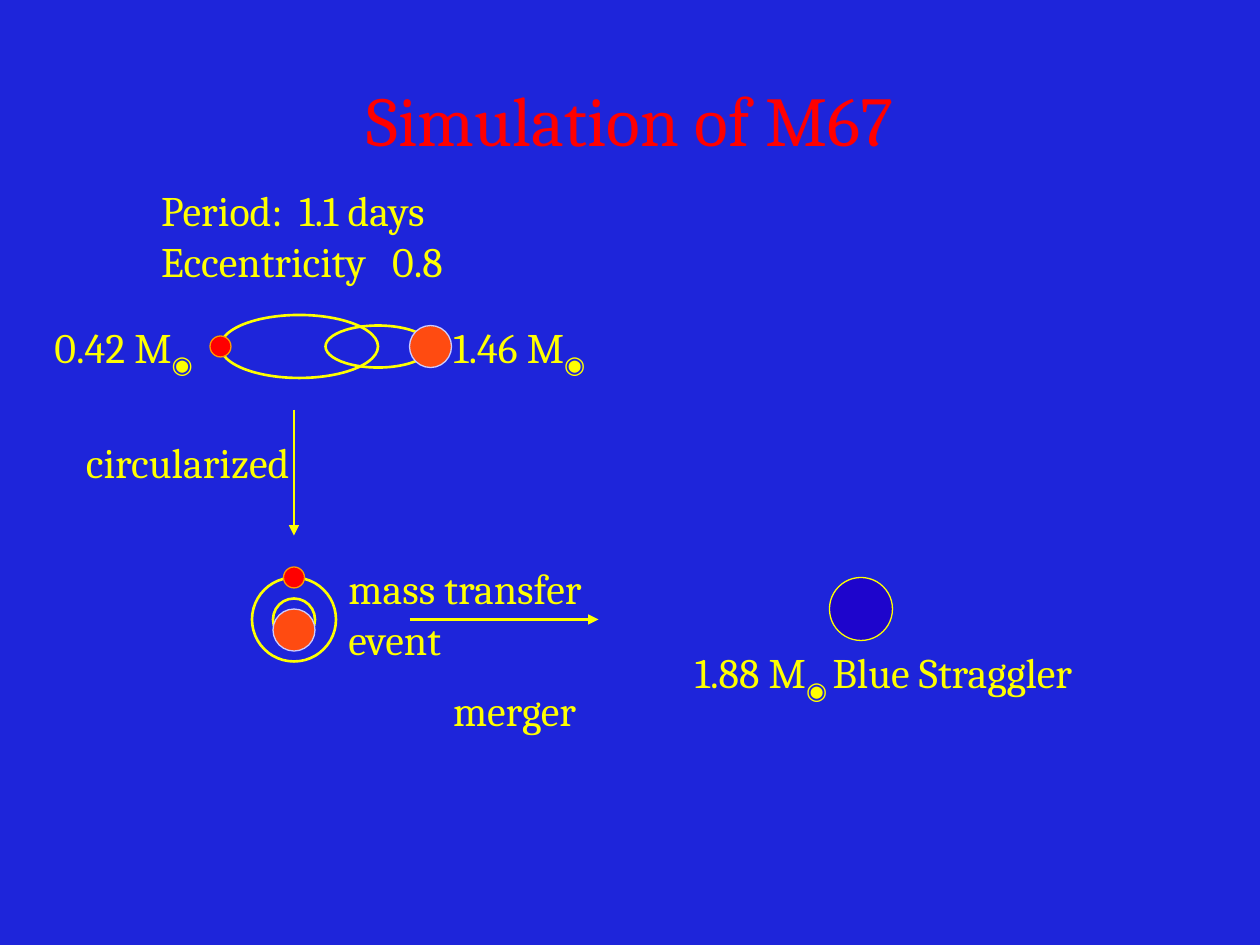
import pptx
import pptx.dml.color
import pptx.enum.shapes
import pptx.enum.text
import pptx.oxml
import pptx.oxml.ns
import pptx.util

Pt = pptx.util.Pt
RGBColor = pptx.dml.color.RGBColor
Align = pptx.enum.text.PP_ALIGN
Anchor = pptx.enum.text.MSO_ANCHOR

BACKGROUND = RGBColor(0x1E, 0x25, 0xDA)
YELLOW = RGBColor(0xFF, 0xFF, 0x00)
RED = RGBColor(0xFF, 0x00, 0x00)
ORANGE = RGBColor(0xFF, 0x4B, 0x11)
AMBER = RGBColor(0xFF, 0x99, 0x00)
LAVENDER = RGBColor(0xCC, 0xCC, 0xFF)
DEEP_BLUE = RGBColor(0x1E, 0x05, 0xCC)

FONT = "Cambria"
SUN = "◉"

# kind of body: fill, outline, outline width
STYLES = {
    "orbit": (None, YELLOW, 1.5),
    "primary": (ORANGE, LAVENDER, 0.75),
    "companion": (RED, AMBER, 0.75),
    "straggler": (DEEP_BLUE, YELLOW, 0.75),
}

# kind, centre x, centre y, width, height
BODIES = [
    ("orbit", 168, 354, 24, 24),
    ("orbit", 168, 354, 48, 48),
    ("primary", 168, 360, 24, 24),
    ("companion", 168, 330, 12, 12),
    ("straggler", 492, 348, 36, 36),
    ("orbit", 171, 198, 90, 36),
    ("orbit", 216, 198, 60, 24),
    ("primary", 246, 198, 24, 24),
    ("companion", 126, 198, 12, 12),
]

# start x, start y, end x, end y
ARROWS = [(168, 234, 168, 306), (234, 354, 342, 354)]

# box, then paragraphs as (alignment, runs)
LABELS = [
    ((42, 246, 144, 36), [(Align.LEFT, ["circularized"])]),
    ((192, 318, 204, 80), [(Align.LEFT, ["mass transfer event"]),
                           (Align.CENTER, ["merger"])]),
    ((390, 366, 264, 36), [(Align.LEFT, ["1.88 M", SUN + " ", "Blue Straggler"])]),
    ((252, 180, 144, 36), [(Align.LEFT, ["1.46 M", SUN])]),
    ((24, 180, 102, 36), [(Align.LEFT, ["0.42 M", SUN])]),
]

TITLE = "Simulation of M67"
TITLE_BOX = (54, 23, 612, 90)

# name, value, tab stop of the value
ORBIT_FACTS = [("Period:", "1.1 days", 79), ("Eccentricity", "0.8", 132)]
ORBIT_FACTS_BOX = (85, 102, 180, 65.5)


def add_frame(slide, box):
    frame = slide.shapes.add_textbox(*map(Pt, box)).text_frame
    frame.word_wrap = True
    return frame


def next_paragraph(frame, index):
    return frame.add_paragraph() if index else frame.paragraphs[0]


def format_runs(paragraph, size=24, color=YELLOW):
    for run in paragraph.runs:
        run.font.name = FONT
        run.font.size = Pt(size)
        run.font.color.rgb = color
        if run.text.strip() == SUN:
            run.font._element.set("baseline", "-25000")


def add_body(slide, kind, center_x, center_y, width, height):
    fill, outline, outline_width = STYLES[kind]
    body = slide.shapes.add_shape(
        pptx.enum.shapes.MSO_SHAPE.OVAL,
        Pt(center_x - width / 2), Pt(center_y - height / 2), Pt(width), Pt(height))
    body.shadow.inherit = False
    if fill is None:
        body.fill.background()
    else:
        body.fill.solid()
        body.fill.fore_color.rgb = fill
    body.line.color.rgb = outline
    body.line.width = Pt(outline_width)


def add_arrow(slide, ends):
    arrow = slide.shapes.add_connector(
        pptx.enum.shapes.MSO_CONNECTOR.STRAIGHT, *map(Pt, ends))
    arrow.line.color.rgb = YELLOW
    arrow.line.width = Pt(1.5)
    head = pptx.oxml.parse_xml(
        f'<a:tailEnd {pptx.oxml.ns.nsdecls("a")} type="triangle"/>')
    arrow.line._get_or_add_ln().append(head)
    arrow._element.spPr.append(
        pptx.oxml.parse_xml(f'<a:effectLst {pptx.oxml.ns.nsdecls("a")}/>'))


def add_label(slide, box, paragraphs):
    frame = add_frame(slide, box)
    frame.auto_size = pptx.enum.text.MSO_AUTO_SIZE.SHAPE_TO_FIT_TEXT
    for index, (alignment, texts) in enumerate(paragraphs):
        paragraph = next_paragraph(frame, index)
        paragraph.alignment = alignment
        if index:
            paragraph.space_before = Pt(12)
        for text in texts:
            paragraph.add_run().text = text
        format_runs(paragraph)


def add_orbit_facts(slide):
    frame = add_frame(slide, ORBIT_FACTS_BOX)
    for index, (name, value, stop) in enumerate(ORBIT_FACTS):
        paragraph = next_paragraph(frame, index)
        paragraph.text = f"{name}\t{value}"
        paragraph._p.get_or_add_pPr().append(pptx.oxml.parse_xml(
            f'<a:tabLst {pptx.oxml.ns.nsdecls("a")}>'
            f'<a:tab pos="{int(Pt(stop))}" algn="l"/></a:tabLst>'))
        format_runs(paragraph)


def add_title(slide):
    frame = add_frame(slide, TITLE_BOX)
    frame.vertical_anchor = Anchor.MIDDLE
    frame.text = TITLE
    frame.paragraphs[0].alignment = Align.CENTER
    format_runs(frame.paragraphs[0], 40, RED)


def main():
    deck = pptx.Presentation()
    deck.slide_width, deck.slide_height = Pt(720), Pt(540)
    slide = deck.slides.add_slide(deck.slide_layouts[6])
    slide.background.fill.solid()
    slide.background.fill.fore_color.rgb = BACKGROUND
    for ends in ARROWS:
        add_arrow(slide, ends)
    for body in BODIES:
        add_body(slide, *body)
    for box, paragraphs in LABELS:
        add_label(slide, box, paragraphs)
    add_orbit_facts(slide)
    add_title(slide)
    deck.save("out.pptx")


if __name__ == "__main__":
    main()
